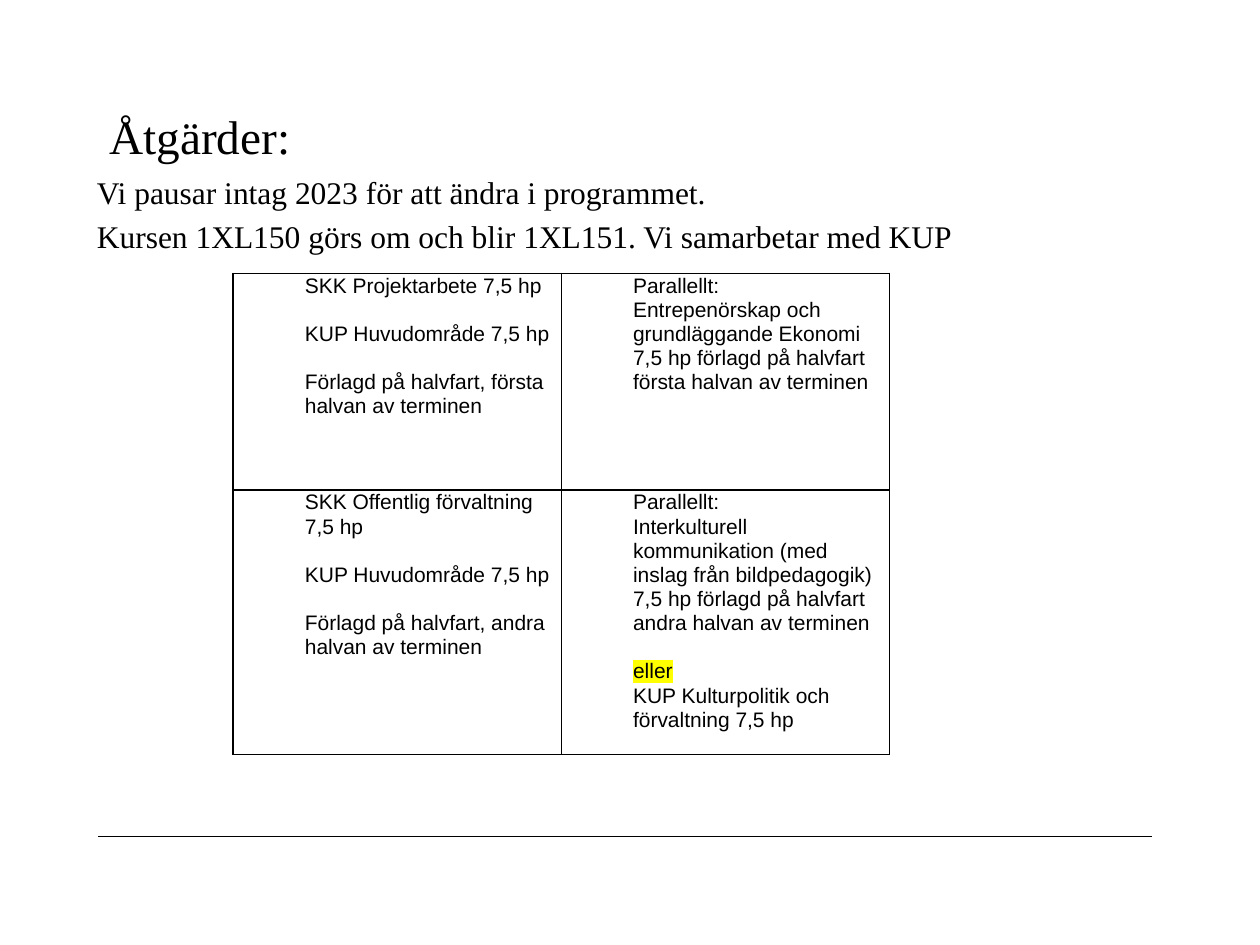
"""Build the slide "Åtgärder" with two lines of text and a two by two course table."""
from dataclasses import dataclass

from lxml import etree
from pptx import Presentation
from pptx import util as u
from pptx.dml.color import RGBColor
from pptx.enum import shapes, text
from pptx.oxml import ns


@dataclass(frozen=True)
class Theme:
    ink: str = "000000"
    marker: str = "FFFF00"
    serif: str = "Times New Roman"
    sans: str = "Arial"
    title: float = 27
    body: float = 18
    cell: float = 12
    cell_line: float = 13.8
    rule: float = 0.5
    border: float = 1


theme = Theme()


def add_run(paragraph, words, font, size, marked=False):
    run = paragraph.add_run()
    run.text = words
    run.font.name, run.font.size = font, u.Pt(size)
    run.font.color.rgb = RGBColor.from_string(theme.ink)
    if marked:
        highlight = etree.Element(ns.qn("a:highlight"))
        etree.SubElement(highlight, ns.qn("a:srgbClr"), val=theme.marker)
        run.font.fill
        run.font._element.find(ns.qn("a:solidFill")).addnext(highlight)


def add_text_box(slide, left, top, width, height):
    shape = slide.shapes.add_textbox(left, top, width, height)
    shape.text_frame.word_wrap = True
    shape.text_frame.vertical_anchor = text.MSO_ANCHOR.TOP
    return shape.text_frame


presentation = Presentation()
presentation.slide_width, presentation.slide_height = u.Inches(10), u.Inches(7.5)
slide = presentation.slides.add_slide(presentation.slide_layouts[6])
column = presentation.slide_width / 100
row = presentation.slide_height / 75

rule = slide.shapes.add_connector(
    shapes.MSO_CONNECTOR.STRAIGHT,
    int(7.8 * column), int(66.4 * row), int(91.4 * column), int(66.4 * row))
rule.line.color.rgb = RGBColor.from_string(theme.ink)
rule.line.width = u.Pt(theme.rule)
etree.SubElement(rule._element.spPr, ns.qn("a:effectLst"))

title = add_text_box(slide, int(7.7 * column), int(8.8 * row), int(83.6 * column), int(8.3 * row))
title.paragraphs[0].line_spacing = u.Pt(theme.title)
add_run(title.paragraphs[0], "Åtgärder:", theme.serif, theme.title)

body = add_text_box(slide, int(6.7 * column), int(13.2 * row), int(84.8 * column), int(50.2 * row))
statements = [
    "Vi pausar intag 2023 för att ändra i programmet.",
    "Kursen 1XL150 görs om och blir 1XL151. Vi samarbetar med KUP",
]
for index, statement in enumerate(statements):
    paragraph = body.add_paragraph() if index else body.paragraphs[0]
    properties = paragraph._p.get_or_add_pPr()
    properties.set("marL", str(int(3.8 * column)))
    properties.set("indent", str(-int(3.8 * column)))
    if index:
        paragraph.space_before = u.Pt(theme.body * 0.2)
    add_run(paragraph, statement, theme.serif, theme.body)

courses = [
    [
        [["SKK Projektarbete 7,5 hp"],
         ["KUP Huvudområde 7,5 hp"],
         ["Förlagd på halvfart, första halvan av terminen"]],
        [["Parallellt:",
          "Entrepenörskap och grundläggande Ekonomi 7,5 hp förlagd på halvfart "
          "första halvan av terminen"]],
    ],
    [
        [["SKK Offentlig förvaltning 7,5 hp"],
         ["KUP Huvudområde 7,5 hp"],
         ["Förlagd på halvfart, andra halvan av terminen"]],
        [["Parallellt:",
          "Interkulturell kommunikation (med inslag från bildpedagogik) 7,5 hp "
          "förlagd på halvfart andra halvan av terminen"],
         ["eller", "KUP Kulturpolitik och förvaltning 7,5 hp"]],
    ],
]
row_heights = [17.2 * row, 21 * row]
table = slide.shapes.add_table(
    2, 2, int(18.5 * column), int(21.7 * row), int(52.1 * column), int(sum(row_heights))).table
table.first_row = table.horz_banding = False
for table_column in table.columns:
    table_column.width = int(26.05 * column)

for row_index, course_row in enumerate(courses):
    table.rows[row_index].height = int(row_heights[row_index])
    for column_index, groups in enumerate(course_row):
        cell = table.cell(row_index, column_index)
        cell.margin_left = cell.margin_right = int(0.7 * column)
        cell.margin_top = cell.margin_bottom = 0
        properties = cell._tc.get_or_add_tcPr()
        for side in ("lnL", "lnR", "lnT", "lnB"):
            border = etree.SubElement(properties, ns.qn(f"a:{side}"), w=str(u.Pt(theme.border)))
            fill = etree.SubElement(border, ns.qn("a:solidFill"))
            etree.SubElement(fill, ns.qn("a:srgbClr"), val=theme.ink)
        cell.fill.background()
        lines = [(group_index, line_index, line)
                 for group_index, group in enumerate(groups)
                 for line_index, line in enumerate(group)]
        for index, (group_index, line_index, line) in enumerate(lines):
            paragraph = cell.text_frame.add_paragraph() if index else cell.text_frame.paragraphs[0]
            paragraph._p.get_or_add_pPr().set("marL", str(int(5 * column)))
            paragraph.line_spacing = u.Pt(theme.cell_line)
            if group_index and not line_index:
                paragraph.space_before = u.Pt(theme.cell_line)
            add_run(paragraph, line, theme.sans, theme.cell, marked=line == "eller")

presentation.save("out.pptx")
